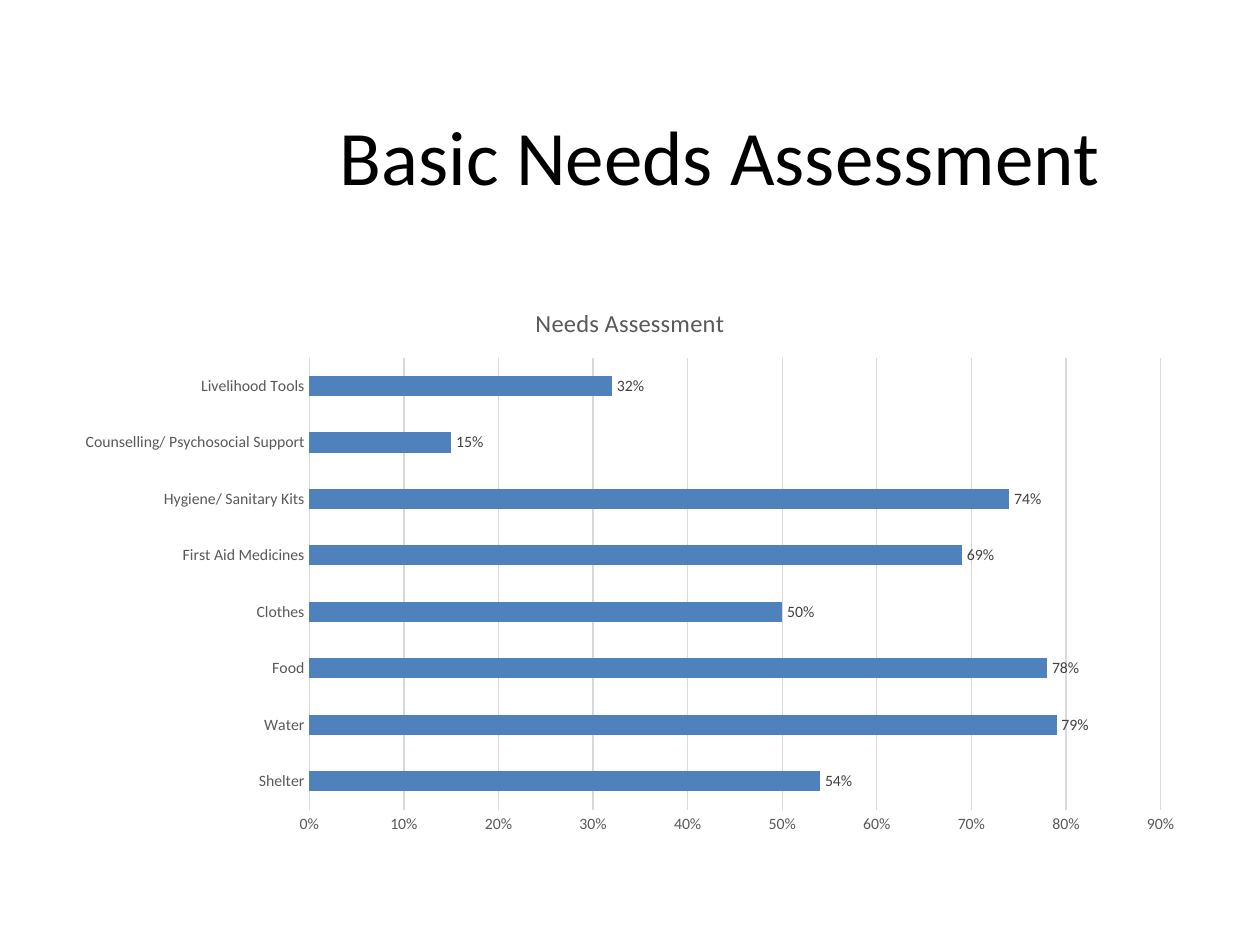
from dataclasses import dataclass

from pptx import Presentation
from pptx.chart.data import CategoryChartData
from pptx.dml.color import RGBColor
from pptx.enum.chart import XL_CHART_TYPE as ChartType
from pptx.enum.chart import XL_LABEL_POSITION as LabelPosition
from pptx.enum.chart import XL_TICK_MARK as TickMark
from pptx.enum.text import MSO_ANCHOR as Anchor
from pptx.enum.text import PP_ALIGN as Align
from pptx.util import Cm, Pt


@dataclass(frozen=True)
class Theme:
    font: str = "Calibri"
    heading: str = "000000"
    muted: str = "595959"
    value: str = "404040"
    rule: str = "D9D9D9"
    bar: str = "4F81BD"
    heading_size: int = 44
    chart_title_size: int = 14
    chart_size: int = 10
    label_size: int = 9
    rule_width: float = 0.75


class SlideBuilder:
    def __init__(self, slide, theme):
        self.slide = slide
        self.theme = theme

    def style_font(self, font, size, color):
        font.name = self.theme.font
        font.size = Pt(size)
        font.bold = False
        font.color.rgb = RGBColor.from_string(color)

    def style_line(self, line):
        line.color.rgb = RGBColor.from_string(self.theme.rule)
        line.width = Pt(self.theme.rule_width)

    def add_text(self, frame, text, size, color):
        paragraph = frame.paragraphs[0]
        paragraph.alignment = Align.CENTER
        run = paragraph.add_run()
        run.text = text
        self.style_font(run.font, size, color)

    def title(self, text, left, top, width, height):
        heading = self.slide.shapes.title
        heading.left, heading.top = left, top
        heading.width, heading.height = width, height
        heading.text_frame.vertical_anchor = Anchor.MIDDLE
        self.add_text(heading.text_frame, text, self.theme.heading_size, self.theme.heading)

    def bar_chart(self, title, shares, left, top, width, height):
        theme = self.theme
        data = CategoryChartData(number_format="0%")
        data.categories = list(shares)
        data.add_series("Series 1", list(shares.values()))
        chart = self.slide.shapes.add_chart(
            ChartType.BAR_CLUSTERED, left, top, width, height, data
        ).chart
        self.style_font(chart.font, theme.chart_size, theme.heading)
        chart.has_legend = False
        chart.has_title = True
        self.add_text(chart.chart_title.text_frame, title, theme.chart_title_size, theme.muted)
        chart.chart_title.include_in_layout = False

        for axis in (chart.category_axis, chart.value_axis):
            axis.major_tick_mark = axis.minor_tick_mark = TickMark.NONE
            self.style_font(axis.tick_labels.font, theme.label_size, theme.muted)
        self.style_line(chart.category_axis.format.line)
        percent = chart.value_axis
        percent.minimum_scale, percent.maximum_scale, percent.major_unit = 0, 0.9, 0.1
        percent.format.line.fill.background()
        percent.has_major_gridlines = True
        self.style_line(percent.major_gridlines.format.line)
        percent.tick_labels.number_format = "0%"
        percent.tick_labels.number_format_is_linked = False

        bars = chart.plots[0]
        bars.gap_width = 182
        bars.vary_by_categories = False
        needs = bars.series[0]
        needs.format.fill.solid()
        needs.format.fill.fore_color.rgb = RGBColor.from_string(theme.bar)
        labels = needs.data_labels
        labels.show_value = True
        labels.position = LabelPosition.OUTSIDE_END
        labels.number_format = "0%"
        labels.number_format_is_linked = False
        self.style_font(labels.font, theme.label_size, theme.value)


def main():
    """Build the basic needs assessment slide."""
    deck = Presentation()
    deck.slide_width, deck.slide_height = Cm(25.4), Cm(19.05)
    builder = SlideBuilder(deck.slides.add_slide(deck.slide_layouts[5]), Theme())
    builder.title("Basic Needs Assessment", Cm(4.9), Cm(1.52), Cm(19.23), Cm(3.18))
    shares = {
        "Shelter": 0.54,
        "Water": 0.79,
        "Food": 0.78,
        "Clothes": 0.5,
        "First Aid Medicines": 0.69,
        "Hygiene/ Sanitary Kits": 0.74,
        "Counselling/ Psychosocial Support": 0.15,
        "Livelihood Tools": 0.32,
    }
    builder.bar_chart("Needs Assessment", shares, Cm(1.27), Cm(5.72), Cm(22.86), Cm(11.3))
    deck.save("out.pptx")


if __name__ == "__main__":
    main()
